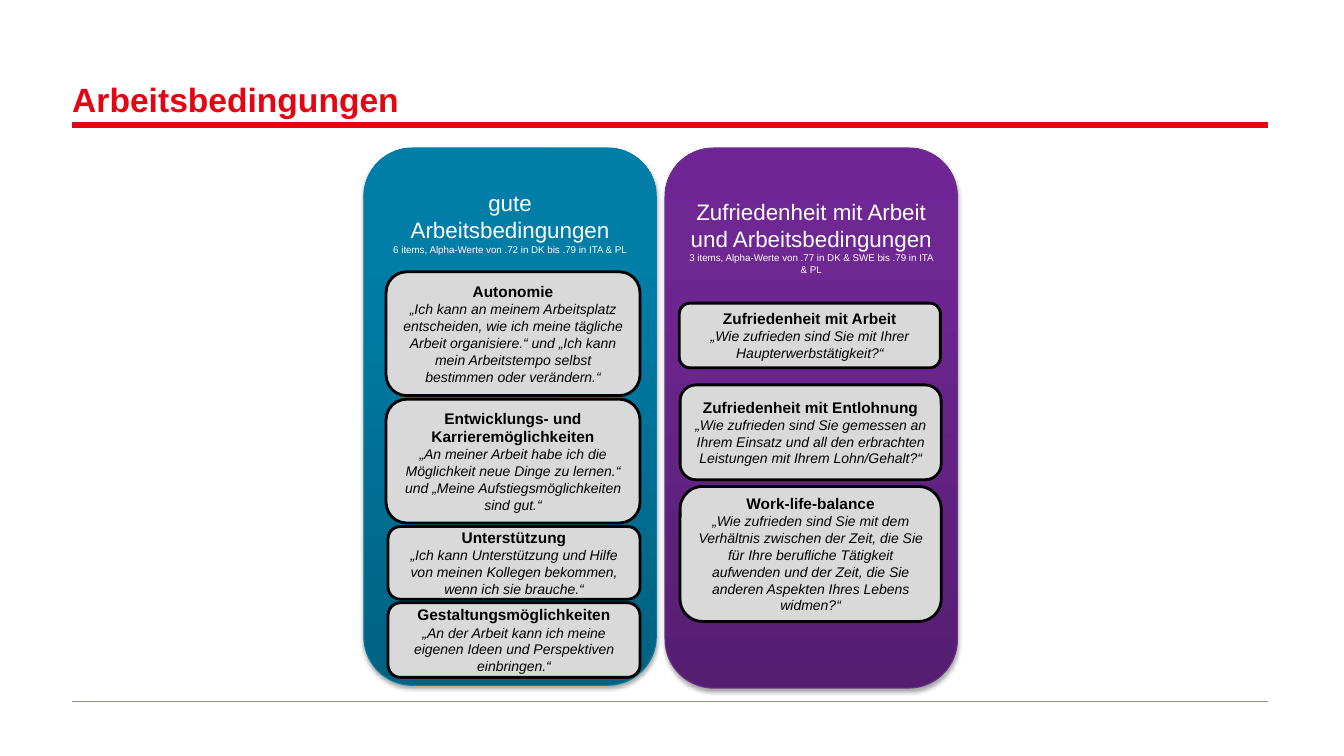
import copy

import lxml.etree
import pptx
import pptx.dml.color
import pptx.enum.shapes
import pptx.enum.text
import pptx.oxml.ns
import pptx.util

Cm = pptx.util.Cm
Pt = pptx.util.Pt
RGBColor = pptx.dml.color.RGBColor
ANCHOR = pptx.enum.text.MSO_ANCHOR
ALIGN = pptx.enum.text.PP_ALIGN
qn = pptx.oxml.ns.qn

RED = RGBColor(0xE3, 0x05, 0x13)
WARM_GREY = RGBColor(0x93, 0x91, 0x85)
LIGHT_GREY = RGBColor(0xD9, 0xD9, 0xD9)
BLACK = RGBColor(0x00, 0x00, 0x00)
WHITE = RGBColor(0xFF, 0xFF, 0xFF)
TEAL_EDGE = RGBColor(0x00, 0x7F, 0xA9)
TEAL_STOPS = (
    (0, RGBColor(0x00, 0x61, 0x81)),
    (0.8, RGBColor(0x00, 0x7E, 0xA8)),
    (1, RGBColor(0x00, 0x7F, 0xA8)),
)
PURPLE_EDGE = RGBColor(0x6C, 0x32, 0x8A)
PURPLE_STOPS = (
    (0, RGBColor(0x55, 0x1E, 0x71)),
    (0.8, RGBColor(0x6F, 0x27, 0x93)),
    (1, RGBColor(0x70, 0x25, 0x96)),
)

TITLE_FONT = {"name": "Arial", "size": Pt(24), "bold": True}
HEADING_FONT = {"name": "Arial", "size": Pt(16)}
SCALE_FONT = {"name": "Arial", "size": Pt(7)}
TOPIC_FONT = {"name": "Arial", "size": Pt(11), "bold": True}
QUOTE_FONT = {"name": "Arial", "size": Pt(10), "bold": False, "italic": True}

WORKING_CONDITIONS = {
    "box": (9.17, 3.73, 7.37, 13.54),
    "stops": TEAL_STOPS,
    "edge": TEAL_EDGE,
    "heading_margin": 0.69,
    "heading": "gute Arbeitsbedingungen",
    "scale": "6 items, Alpha-Werte von .72 in DK bis .79 in ITA & PL",
    "cards": (
        (0.56, 3.12, 6.4, 3.12, "Autonomie",
         "„Ich kann an meinem Arbeitsplatz entscheiden, wie ich meine tägliche Arbeit "
         "organisiere.“ und „Ich kann mein Arbeitstempo selbst bestimmen oder verändern.“"),
        (0.56, 0.09, 6.4, 3.12, "Entwicklungs- und Karrieremöglichkeiten",
         "„An meiner Arbeit habe ich die Möglichkeit neue Dinge zu lernen.“ und "
         "„Meine Aufstiegsmöglichkeiten sind gut.“"),
        (0.61, 0.09, 6.35, 1.83, "Unterstützung",
         "„Ich kann Unterstützung und Hilfe von meinen Kollegen bekommen, "
         "wenn ich sie brauche.“"),
        (0.61, 0.09, 6.35, 1.88, "Gestaltungsmöglichkeiten",
         "„An der Arbeit kann ich meine eigenen Ideen und Perspektiven einbringen.“"),
    ),
}
SATISFACTION = {
    "box": (16.76, 3.73, 7.37, 13.61),
    "stops": PURPLE_STOPS,
    "edge": PURPLE_EDGE,
    "heading_margin": 0.91,
    "heading": "Zufriedenheit mit Arbeit und Arbeitsbedingungen",
    "scale": "3 items, Alpha-Werte von .77 in DK & SWE bis .79 in ITA & PL",
    "cards": (
        (0.36, 3.91, 6.58, 1.63, "Zufriedenheit mit Arbeit",
         "„Wie zufrieden sind Sie mit Ihrer Haupterwerbstätigkeit?“"),
        (0.38, 0.43, 6.58, 2.39, "Zufriedenheit mit Entlohnung",
         "„Wie zufrieden sind Sie gemessen an Ihrem Einsatz und all den erbrachten "
         "Leistungen mit Ihrem Lohn/Gehalt?“"),
        (0.38, 0.17, 6.58, 3.4, "Work-life-balance",
         "„Wie zufrieden sind Sie mit dem Verhältnis zwischen der Zeit, die Sie für Ihre "
         "berufliche Tätigkeit aufwenden und der Zeit, die Sie anderen Aspekten Ihres "
         "Lebens widmen?“"),
    ),
}


def apply_format(target, values):
    for name, value in values.items():
        setattr(target, name, value)


def write_paragraph(paragraph, wording, font, color, align):
    paragraph.text = wording
    paragraph.alignment = align
    apply_format(paragraph.runs[0].font, font)
    paragraph.runs[0].font.color.rgb = color


def add_rounded_box(slide, box, edge, width):
    rounded = slide.shapes.add_shape(
        pptx.enum.shapes.MSO_SHAPE.ROUNDED_RECTANGLE, *map(Cm, box))
    rounded.shadow.inherit = False
    rounded.line.color.rgb = edge
    rounded.line.width = Pt(width)
    rounded.text_frame.word_wrap = True
    return rounded


def write_pair(frame, first, second, fonts, color):
    write_paragraph(frame.paragraphs[0], first, fonts[0], color, ALIGN.CENTER)
    write_paragraph(frame.add_paragraph(), second, fonts[1], color, ALIGN.CENTER)


def add_rule(slide, left, top, width, color, weight):
    rule = slide.shapes.add_connector(
        pptx.enum.shapes.MSO_CONNECTOR.STRAIGHT,
        Cm(left), Cm(top), Cm(left + width), Cm(top))
    rule.line.color.rgb = color
    rule.line.width = Pt(weight)
    lxml.etree.SubElement(rule._element.spPr, qn("a:effectLst"))


def add_title(slide, left, top, width, height):
    title = slide.shapes.title
    apply_format(title, {"left": Cm(left), "top": Cm(top),
                         "width": Cm(width), "height": Cm(height)})
    frame = title.text_frame
    apply_format(frame, {
        "margin_left": 0, "margin_top": 0, "margin_right": 0, "margin_bottom": 0,
        "vertical_anchor": ANCHOR.BOTTOM, "word_wrap": True,
        "auto_size": pptx.enum.text.MSO_AUTO_SIZE.NONE,
    })
    write_paragraph(frame.paragraphs[0], "Arbeitsbedingungen", TITLE_FONT, RED, ALIGN.LEFT)
    frame.paragraphs[0].line_spacing = 0.9


def fill_gradient(panel, stops):
    panel.fill.gradient()
    panel.fill.gradient_angle = 90
    stop_list = panel._element.spPr.find(".//" + qn("a:gsLst"))
    stop_list.append(copy.deepcopy(stop_list[0]))
    for stop, (position, color) in zip(panel.fill.gradient_stops, stops):
        stop.position = position
        stop.color.rgb = color


def add_soft_shadow(panel):
    effects = panel._element.spPr.find(qn("a:effectLst"))
    shadow = lxml.etree.SubElement(
        effects, qn("a:outerShdw"), blurRad=str(Pt(3.1)), dist=str(Pt(1.8)),
        dir="5400000", rotWithShape="0")
    color = lxml.etree.SubElement(shadow, qn("a:srgbClr"), val="000000")
    lxml.etree.SubElement(color, qn("a:alpha"), val="35000")


def add_card(slide, box, topic, quote):
    card = add_rounded_box(slide, box, BLACK, 2)
    card.fill.solid()
    card.fill.fore_color.rgb = LIGHT_GREY
    card.text_frame.vertical_anchor = ANCHOR.MIDDLE
    write_pair(card.text_frame, topic, quote, (TOPIC_FONT, QUOTE_FONT), BLACK)


def add_panel(slide, content):
    left, top, _, _ = content["box"]
    panel = add_rounded_box(slide, content["box"], content["edge"], 0.75)
    fill_gradient(panel, content["stops"])
    add_soft_shadow(panel)
    apply_format(panel.text_frame, {"vertical_anchor": ANCHOR.TOP,
                                    "margin_top": Cm(content["heading_margin"])})
    write_pair(panel.text_frame, content["heading"], content["scale"],
               (HEADING_FONT, SCALE_FONT), WHITE)
    card_top = top
    for indent, gap, width, height, topic, quote in content["cards"]:
        card_top += gap
        add_card(slide, (left + indent, card_top, width, height), topic, quote)
        card_top += height


def main():
    presentation = pptx.Presentation()
    presentation.slide_width = Cm(33.87)
    presentation.slide_height = Cm(19.05)
    slide = presentation.slides.add_slide(presentation.slide_layouts[5])
    add_rule(slide, 1.82, 3.16, 30.13, RED, 4.25)
    add_rule(slide, 1.82, 17.67, 30.13, WARM_GREY, 1)
    add_title(slide, 1.82, 0.53, 30.13, 2.49)
    for content in (WORKING_CONDITIONS, SATISFACTION):
        add_panel(slide, content)
    presentation.save("out.pptx")


if __name__ == "__main__":
    main()
